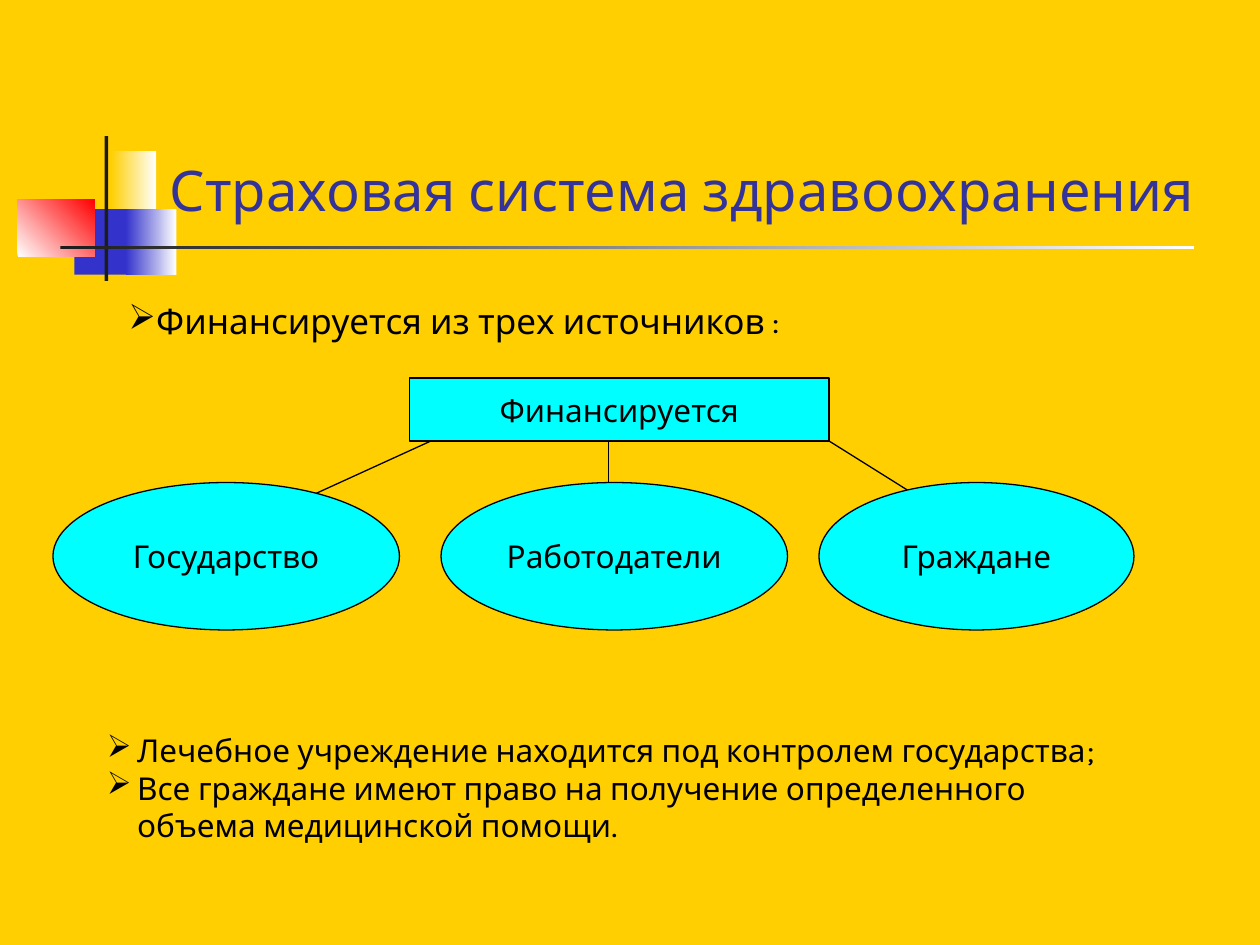
from lxml import etree
from pptx import Presentation
from pptx.dml.color import RGBColor
from pptx.enum.shapes import MSO_CONNECTOR, MSO_SHAPE
from pptx.enum.text import MSO_ANCHOR, PP_ALIGN
from pptx.oxml.ns import qn
from pptx.util import Inches, Pt

COLORS = {
    "gold": "FFCF01", "white": "FFFFFF", "blue": "3333CC", "red": "FF0000",
    "dark": "1C1C1C", "title": "333399", "cyan": "00FFFF", "black": "000000",
}
FONT = "Karla"


def rgb(name):
    return RGBColor.from_string(COLORS[name])


def add_runs(p, runs, color="black"):
    for text, size in runs:
        r = p.add_run()
        r.text = text
        r.font.name = FONT
        r.font.size = Pt(size)
        r.font.color.rgb = rgb(color)


prs = Presentation()
prs.slide_width, prs.slide_height = Inches(10), Inches(7.5)
s = prs.slides.add_slide(prs.slide_layouts[6])
s.background.fill.solid()
s.background.fill.fore_color.rgb = rgb("gold")

decorations = [
    (0.88, 1.2, 0.36, 0.52, ("gold", "white"), 0),
    (0.59, 1.66, 0.46, 0.52, ("blue",), 0),
    (1, 1.66, 0.4, 0.52, ("blue", "white"), 0),
    (0.14, 1.58, 0.61, 0.46, ("white", "red"), 45),
    (0.83, 1.08, 0.03, 1.15, ("dark",), 0),
    (0.48, 1.95, 9, 0.03, ("dark", "white"), 0),
]
for x, y, w, h, colors, angle in decorations:
    sp = s.shapes.add_shape(MSO_SHAPE.RECTANGLE, Inches(x), Inches(y), Inches(w), Inches(h))
    sp.shadow.inherit = False
    sp.line.fill.background()
    if len(colors) == 1:
        sp.fill.solid()
        sp.fill.fore_color.rgb = rgb(colors[0])
    else:
        sp.fill.gradient()
        sp.fill.gradient_angle = angle
        for stop, color, position in zip(sp.fill.gradient_stops, colors, (0, 1)):
            stop.color.rgb = rgb(color)
            stop.position = position

texts = [
    (1.25, 0.25, 8.52, 1.6, MSO_ANCHOR.BOTTOM, "title", None,
     [[("Страховая система здравоохранения", 32), (" ", 44)]]),
    (0.92, 2.33, 5.67, 0.43, MSO_ANCHOR.TOP, "black", 0,
     [[("Финансируется из трех источников", 20), (" :", 18)]]),
    (0.75, 5.75, 8.33, 1, MSO_ANCHOR.MIDDLE, "black", 0.24,
     [[("Лечебное учреждение находится под контролем государства;", 18)],
      [("Все граждане имеют право на получение определенного объема медицинской помощи.", 18)]]),
]
for x, y, w, h, anchor, color, indent, paragraphs in texts:
    tf = s.shapes.add_textbox(Inches(x), Inches(y), Inches(w), Inches(h)).text_frame
    tf.word_wrap = True
    tf.vertical_anchor = anchor
    for i, runs in enumerate(paragraphs):
        p = tf.add_paragraph() if i else tf.paragraphs[0]
        add_runs(p, runs, color)
        if indent is not None:
            pPr = p._p.get_or_add_pPr()
            pPr.set("marL", str(Inches(indent)))
            pPr.set("indent", str(-Inches(indent)))
            etree.SubElement(pPr, qn("a:buChar")).set("char", "➢")

for x1, y1, x2, y2 in [(2.5, 3.92, 3.42, 3.5), (4.83, 3.5, 4.83, 3.83), (6.58, 3.5, 7.25, 3.92)]:
    line = s.shapes.add_connector(
        MSO_CONNECTOR.STRAIGHT, Inches(x1), Inches(y1), Inches(x2), Inches(y2))
    line.line.color.rgb = rgb("black")
    line.line.width = Pt(0.75)
    etree.SubElement(line._element.spPr, qn("a:effectLst"))

nodes = [
    ("Финансируется", MSO_SHAPE.RECTANGLE, 3.25, 3, 3.33, 0.5),
    ("Государство", MSO_SHAPE.OVAL, 0.42, 3.83, 2.75, 1.17),
    ("Работодатели", MSO_SHAPE.OVAL, 3.5, 3.83, 2.75, 1.17),
    ("Граждане", MSO_SHAPE.OVAL, 6.5, 3.83, 2.5, 1.17),
]
for text, kind, x, y, w, h in nodes:
    sp = s.shapes.add_shape(kind, Inches(x), Inches(y), Inches(w), Inches(h))
    sp.shadow.inherit = False
    sp.fill.solid()
    sp.fill.fore_color.rgb = rgb("cyan")
    sp.line.color.rgb = rgb("black")
    sp.line.width = Pt(0.75)
    tf = sp.text_frame
    tf.word_wrap = False
    tf.vertical_anchor = MSO_ANCHOR.MIDDLE
    p = tf.paragraphs[0]
    p.alignment = PP_ALIGN.CENTER
    add_runs(p, [(text, 18)])

prs.save("out.pptx")
